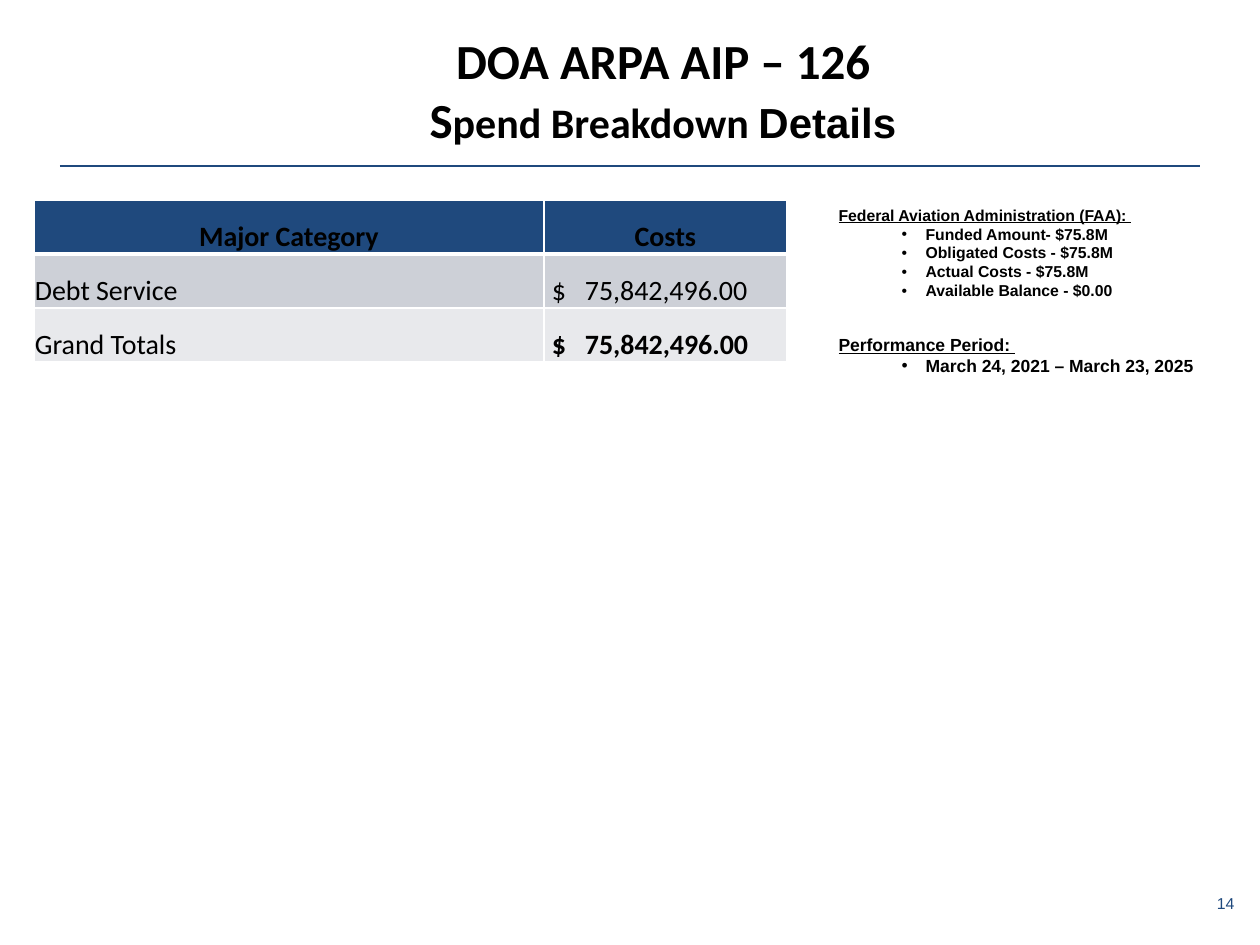
"""Build the DOA ARPA AIP – 126 spend breakdown slide."""
from dataclasses import dataclass

from lxml import etree
from pptx import Presentation
from pptx import util as u
from pptx.dml.color import RGBColor
from pptx.enum import shapes, text
from pptx.oxml.ns import qn

PX = 914400 / 126
NAVY = RGBColor(0x1F, 0x49, 0x7D)
BLACK = RGBColor(0, 0, 0)
WHITE = RGBColor(0xFF, 0xFF, 0xFF)
GREY = RGBColor(0xCD, 0xD0, 0xD7)
PALE = RGBColor(0xE8, 0xE9, 0xEC)


@dataclass(frozen=True)
class Box:
    left: int
    top: int
    width: int
    height: int

    def emu(self) -> list[u.Emu]:
        return [px(self.left), px(self.top), px(self.width), px(self.height)]


@dataclass(frozen=True)
class FactList:
    box: Box
    size: int
    heading: str
    facts: tuple[str, ...]


@dataclass(frozen=True)
class CostRow:
    category: str
    cost: str
    fill: RGBColor
    category_bold: bool = False
    cost_bold: bool = False
    header: bool = False


FACT_LISTS = (
    FactList(Box(826, 199, 399, 149), 9, "Federal Aviation Administration (FAA): ",
             ("Funded Amount- $75.8M", "Obligated Costs - $75.8M",
              "Actual Costs - $75.8M", "Available Balance - $0.00")),
    FactList(Box(826, 328, 399, 97), 10, "Performance Period: ",
             ("March 24, 2021 – March 23, 2025",)),
)
COST_ROWS = (
    CostRow("Major Category", "Costs", NAVY, True, True, header=True),
    CostRow("Debt Service", "$\t75,842,496.00", GREY),
    CostRow("Grand Totals", "$\t75,842,496.00", PALE, cost_bold=True),
)


def px(length: int) -> u.Emu:
    return u.Emu(round(length * PX))


def place(shape, box: Box) -> None:
    shape.left, shape.top, shape.width, shape.height = box.emu()


def set_font(font, name: str, size: int, bold: bool = False, color: RGBColor = BLACK) -> None:
    font.name, font.size, font.bold = name, u.Pt(size), bold
    font.color.rgb = color


def set_bullet(paragraph, mark: str = "", left: int = 0, indent: int = 0) -> None:
    properties = paragraph._p.get_or_add_pPr()
    properties.set("marL", str(px(left)))
    properties.set("indent", str(px(indent)))
    if mark:
        etree.SubElement(properties, qn("a:buFont")).set("typeface", "Arial")
        etree.SubElement(properties, qn("a:buChar")).set("char", mark)
    else:
        etree.SubElement(properties, qn("a:buNone"))


def set_tab(paragraph, position: int) -> None:
    tabs = etree.SubElement(paragraph._p.get_or_add_pPr(), qn("a:tabLst"))
    etree.SubElement(tabs, qn("a:tab"), pos=str(px(position)), algn="l")


def set_borders(cell, header: bool) -> None:
    properties = cell._tc.get_or_add_tcPr()
    widths = {"L": 1, "R": 1, "T": 1, "B": 3 if header else 1}
    if not header:
        del widths["T"]
    for side, width in widths.items():
        border = etree.SubElement(properties, qn(f"a:ln{side}"), w=str(u.Pt(width)))
        fill = etree.SubElement(border, qn("a:solidFill"))
        etree.SubElement(fill, qn("a:srgbClr"), val=str(WHITE))


def fill_title(title) -> None:
    place(title, Box(105, 24, 1121, 131))
    frame = title.text_frame
    frame.margin_left = px(19)
    frame.vertical_anchor = text.MSO_ANCHOR.MIDDLE
    frame.auto_size = text.MSO_AUTO_SIZE.NONE
    paragraph = frame.paragraphs[0]
    paragraph.alignment = text.PP_ALIGN.CENTER
    set_font(paragraph.font, "Calibri", 28, True)
    paragraph.add_run().text = "DOA ARPA AIP – 126 "
    paragraph.add_line_break()
    paragraph.add_run().text = "S"
    for words, name in (("pend Breakdown ", "Calibri"), ("Details ", "Arial")):
        run = paragraph.add_run()
        run.text = words
        run.font.name, run.font.size = name, u.Pt(24)


def fill_facts(shape, content: FactList) -> None:
    place(shape, content.box)
    frame = shape.text_frame
    frame.word_wrap = True
    frame.auto_size = text.MSO_AUTO_SIZE.NONE
    frame.text = "\n".join((content.heading, *content.facts))
    for index, paragraph in enumerate(frame.paragraphs):
        paragraph.space_before = u.Pt(0)
        if index:
            paragraph.level = 1
            set_bullet(paragraph, "•", 87, -24)
        else:
            set_bullet(paragraph)
        set_font(paragraph.font, "Arial", content.size, True)
        paragraph.font.underline = index == 0


def fill_cell(cell, words: str, bold: bool, row: CostRow) -> None:
    set_borders(cell, row.header)
    cell.fill.solid()
    cell.fill.fore_color.rgb = row.fill
    cell.vertical_anchor = text.MSO_ANCHOR.BOTTOM
    amount = "\t" in words
    cell.margin_left = px(8 if amount else 1)
    cell.margin_right = cell.margin_top = px(1)
    cell.margin_bottom = 0
    cell.text = words
    paragraph = cell.text_frame.paragraphs[0]
    paragraph.alignment = text.PP_ALIGN.CENTER if row.header else text.PP_ALIGN.LEFT
    if amount:
        set_tab(paragraph, 33)
    set_font(paragraph.font, "Calibri", 16, bold)


def add_cost_table(slide) -> None:
    box = Box(34, 200, 753, 162)
    table = slide.shapes.add_table(len(COST_ROWS), 2, *box.emu()).table
    for column, width in zip(table.columns, (510, 243)):
        column.width = px(width)
    for index, row in enumerate(COST_ROWS):
        fill_cell(table.cell(index, 0), row.category, row.category_bold, row)
        fill_cell(table.cell(index, 1), row.cost, row.cost_bold, row)


def add_rule(slide) -> None:
    line = slide.shapes.add_connector(
        shapes.MSO_CONNECTOR.STRAIGHT, px(60), px(166), px(1200), px(166))
    line.line.color.rgb = NAVY
    line.line.width = u.Pt(1.5)
    etree.SubElement(line._element.spPr, qn("a:effectLst"))


def add_page_number(slide) -> None:
    frame = slide.shapes.add_textbox(*Box(1206, 888, 41, 30).emu()).text_frame
    frame.margin_left, frame.margin_right = px(11), 0
    frame.word_wrap = False
    frame.text = "14"
    set_font(frame.paragraphs[0].font, "Arial", 9, color=NAVY)


def main() -> None:
    presentation = Presentation()
    presentation.slide_width, presentation.slide_height = px(1260), px(945)
    slide = presentation.slides.add_slide(presentation.slide_layouts[3])
    add_rule(slide)
    add_page_number(slide)
    fill_title(slide.shapes.title)
    for index, content in enumerate(FACT_LISTS, start=1):
        fill_facts(slide.placeholders[index], content)
    add_cost_table(slide)
    presentation.save("out.pptx")


if __name__ == "__main__":
    main()
